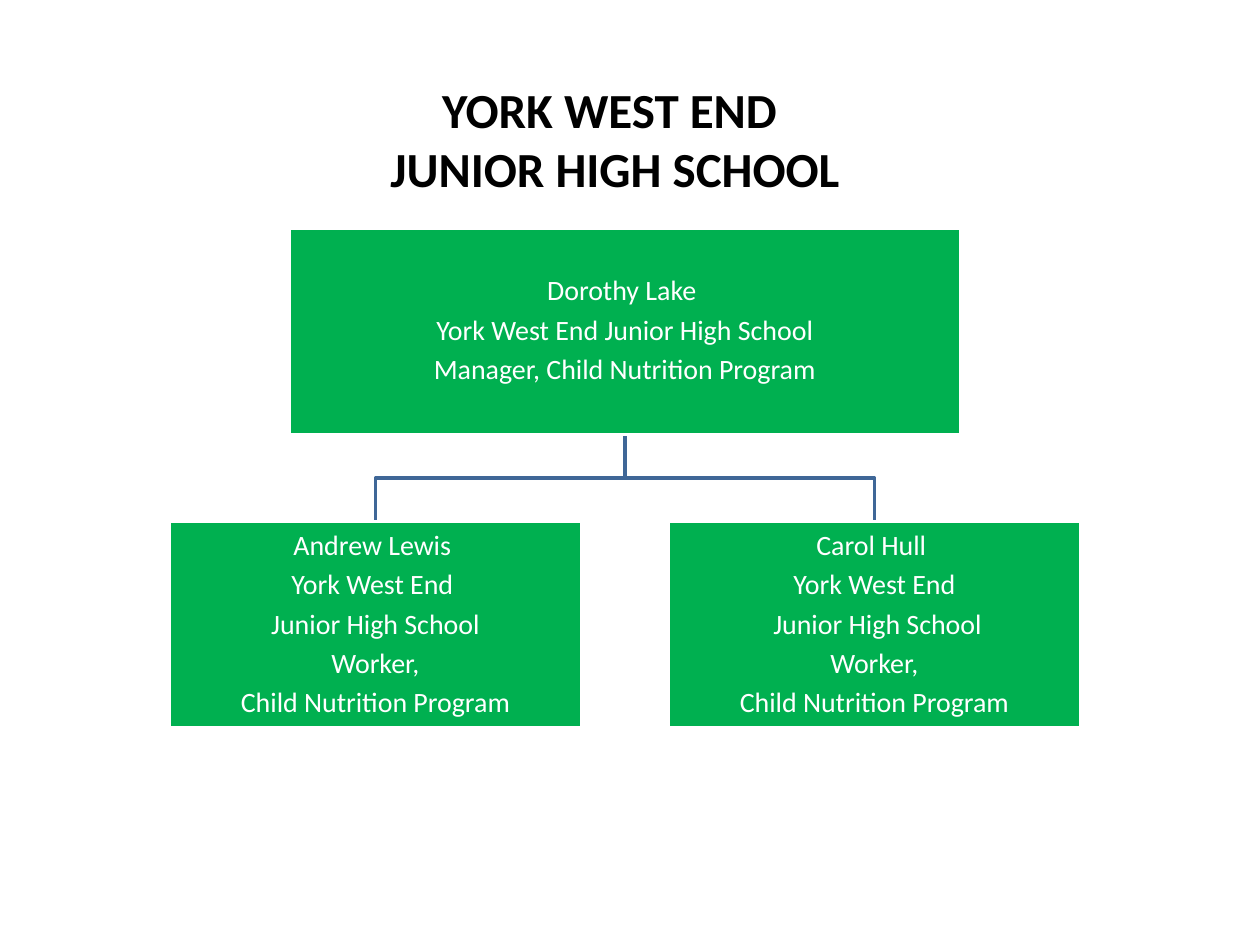
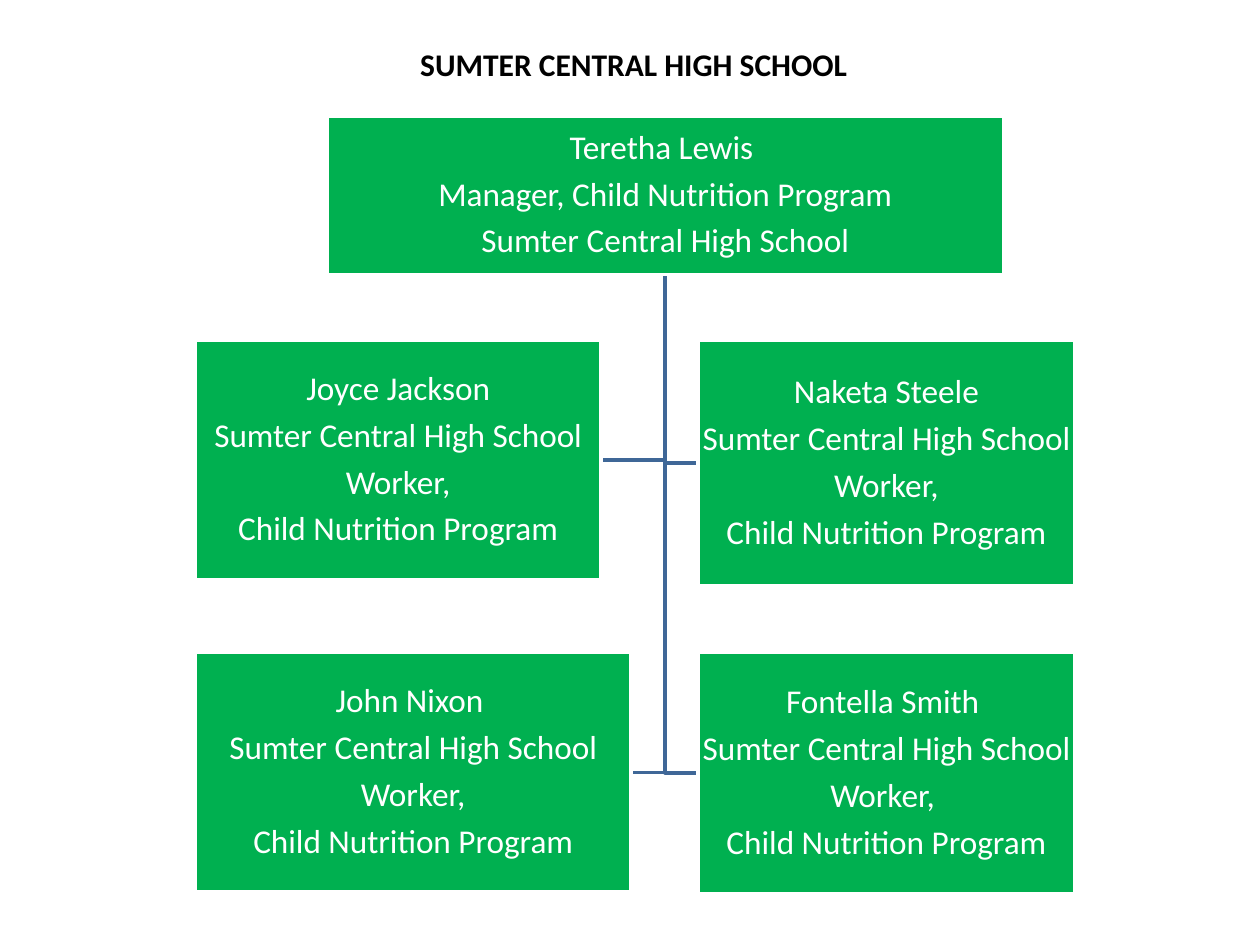
from pptx import Presentation
from pptx.dml.color import RGBColor
from pptx.enum import shapes, text
from pptx.util import Inches, Pt

GREEN = RGBColor(0x00, 0xB0, 0x50)
BLUE = RGBColor(0x3F, 0x67, 0x97)
WHITE = RGBColor(0xFF, 0xFF, 0xFF)
BLACK = RGBColor(0x00, 0x00, 0x00)
FONT = "Calibri"
LINE_WIDTH = Pt(2)
INSET = 0.01
SPACE_AFTER = 0.33  # share of the text size

PROGRAM = "Child Nutrition Program"
YORK = "York West End Junior High School"
SUMTER = "Sumter Central High School"
SUMTER_WORKER = [SUMTER, "Worker,", PROGRAM]

# Lengths in inches. Each worker: column, row, width, height, lines of text.
CHARTS = [
    {
        "title": ["YORK WEST END ", "JUNIOR HIGH SCHOOL"],
        "title_box": (2.34, 0.58, 5.08, 1.04), "title_size": 28, "title_wrap": True,
        "size": 16, "axis": 4.96, "columns": (1.34, 5.3), "rows": (4.14,),
        "links": "top",
        "manager": (1.81, 5.33, 1.64,
                    ["Dorothy Lake ", YORK, "Manager, " + PROGRAM]),
        "workers": [
            (0, 0, 3.28, 1.64, ["Andrew Lewis ", "York West End ",
                                "Junior High School", "Worker,", PROGRAM]),
            (1, 0, 3.28, 1.64, ["Carol Hull ", "York West End",
                                " Junior High School", "Worker,", PROGRAM]),
        ],
    },
    {
        "title": ["SUMTER CENTRAL HIGH SCHOOL"],
        "title_box": (3.22, 0.31, 3.62, 0.4), "title_size": 18, "title_wrap": False,
        "size": 19, "axis": 5.28, "columns": (1.55, 5.54), "rows": (2.7, 5.18),
        "links": "side",
        "manager": (0.92, 5.37, 1.26,
                    ["Teretha Lewis ", "Manager, " + PROGRAM, SUMTER]),
        "workers": [
            (0, 0, 3.22, 1.9, ["Joyce Jackson"] + SUMTER_WORKER),
            (1, 0, 2.99, 1.95, ["Naketa Steele"] + SUMTER_WORKER),
            (0, 1, 3.46, 1.9, ["John Nixon "] + SUMTER_WORKER),
            (1, 1, 2.99, 1.91, ["Fontella Smith ", SUMTER, "Worker, ", PROGRAM]),
        ],
    },
]


def write(tf, lines, size, color, bold=False, **paragraph_format):
    for i, line in enumerate(lines):
        p = tf.paragraphs[0] if i == 0 else tf.add_paragraph()
        p.alignment = text.PP_ALIGN.CENTER
        for name, value in paragraph_format.items():
            setattr(p, name, value)
        r = p.add_run()
        r.text = line
        for name, value in {"name": FONT, "size": Pt(size), "bold": bold}.items():
            setattr(r.font, name, value)
        r.font.color.rgb = color


def add_title(s, chart):
    tf = s.shapes.add_textbox(*map(Inches, chart["title_box"])).text_frame
    tf.word_wrap = chart["title_wrap"]
    write(tf, chart["title"], chart["title_size"], BLACK, bold=True)


def add_box(s, box, lines, size):
    sp = s.shapes.add_shape(shapes.MSO_SHAPE.RECTANGLE, *map(Inches, box))
    sp.shadow.inherit = False
    sp.fill.solid()
    sp.fill.fore_color.rgb = GREEN
    sp.line.color.rgb = WHITE
    sp.line.width = LINE_WIDTH
    tf = sp.text_frame
    tf.word_wrap = True
    tf.vertical_anchor = text.MSO_ANCHOR.MIDDLE
    for side in ("left", "top", "right", "bottom"):
        setattr(tf, "margin_" + side, Inches(INSET))
    write(tf, lines, size, WHITE, line_spacing=0.9,
          space_after=Pt(SPACE_AFTER * size))


def link_points(chart, start_y, box):
    """Corners of the line from the manager down to one worker's box."""
    left, top, width, height = box
    axis = chart["axis"]
    if chart["links"] == "top":
        middle, bend = left + width / 2, (start_y + top) / 2
        return [(axis, start_y), (axis, bend), (middle, bend), (middle, top)]
    inner_edge = left if left > axis else left + width
    middle = top + height / 2
    return [(axis, start_y), (axis, middle), (inner_edge, middle)]


def add_link(s, points):
    start, *rest = [(Inches(x), Inches(y)) for x, y in points]
    builder = s.shapes.build_freeform(*start)
    builder.add_line_segments(rest, close=False)
    sp = builder.convert_to_shape()
    sp.shadow.inherit = False
    sp.fill.background()
    sp.line.color.rgb = BLUE
    sp.line.width = LINE_WIDTH


def add_org_chart(s, chart):
    top, width, height, lines = chart["manager"]
    people = [((chart["axis"] - width / 2, top, width, height), lines)]
    for column, row, w, h, lines in chart["workers"]:
        people.append(((chart["columns"][column], chart["rows"][row], w, h), lines))
    for box, _ in people[1:]:
        add_link(s, link_points(chart, top + height, box))
    for box, lines in people:
        add_box(s, box, lines, chart["size"])


def main():
    prs = Presentation()
    prs.slide_width, prs.slide_height = Inches(10), Inches(7.5)
    for chart in CHARTS:
        s = prs.slides.add_slide(prs.slide_layouts[6])
        add_org_chart(s, chart)
        add_title(s, chart)
    prs.save("out.pptx")


if __name__ == "__main__":
    main()
